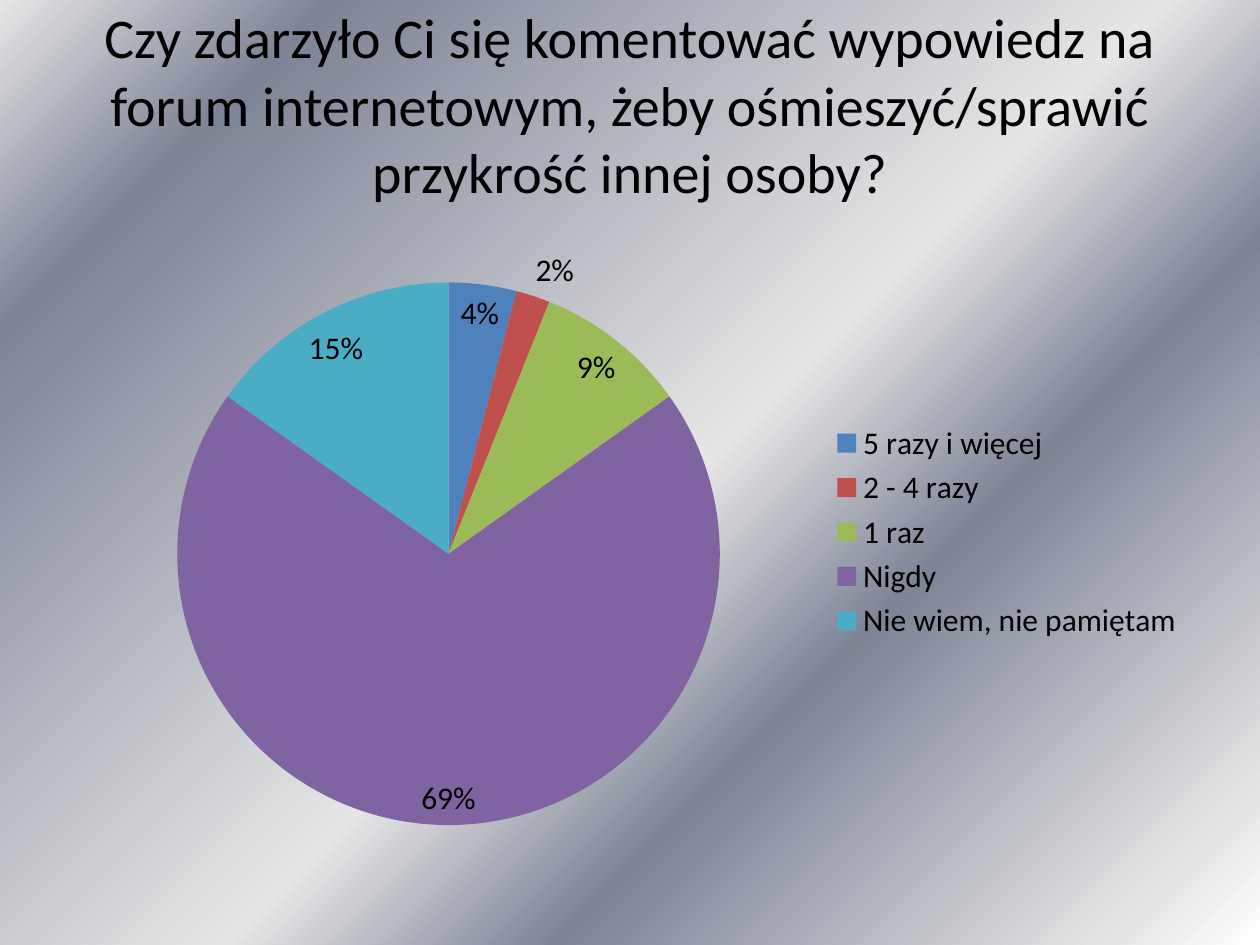
from lxml import etree
from pptx import Presentation, util as u
from pptx.chart.data import CategoryChartData
from pptx.dml.color import RGBColor
from pptx.enum import chart as c, text
from pptx.oxml import parse_xml
from pptx.oxml.ns import nsdecls, qn

WIDTH, HEIGHT = u.Inches(10), u.Inches(7.5)
FONT = "Calibri"
COLOURS = {
    "text": "000000", "white": "FFFFFF", "silver": "E6E6E6", "steel": "7D8496",
    "blue": "4F81BD", "red": "C0504D", "green": "9BBB59",
    "purple": "8064A2", "teal": "4BACC6",
}
BACKGROUND_STOPS = [(0, "white"), (7, "silver"), (32, "steel"),
                    (47, "silver"), (85, "steel"), (100, "silver")]
QUESTION = ("Czy zdarzyło Ci się komentować wypowiedz na forum internetowym, "
            "żeby ośmieszyć/sprawić przykrość innej osoby?")
ANSWERS = [
    ("5 razy i więcej", 0.04, "blue"),
    ("2 - 4 razy", 0.02, "red"),
    ("1 raz", 0.09, "green"),
    ("Nigdy", 0.69, "purple"),
    ("Nie wiem, nie pamiętam", 0.15, "teal"),
]


def colour(name):
    return RGBColor.from_string(COLOURS[name])


def box(left, top, width, height):
    """Turn shares of the slide's size into lengths."""
    return (int(left * WIDTH), int(top * HEIGHT),
            int(width * WIDTH), int(height * HEIGHT))


def format_font(font, size):
    font.name = FONT
    font.size = u.Pt(size)
    font.color.rgb = colour("text")


def paint_background(slide, stops, angle):
    """Fill with a gradient; the angle runs clockwise, in degrees."""
    fill = slide.background.fill
    fill.gradient()
    gradient = slide.background._cSld.find(".//" + qn("a:gradFill"))
    stop_list = gradient.find(qn("a:gsLst"))
    for stop in list(stop_list):
        stop_list.remove(stop)
    for percent, name in stops:
        stop_list.append(parse_xml(
            f'<a:gs {nsdecls("a")} pos="{percent * 1000}">'
            f'<a:srgbClr val="{COLOURS[name]}"/></a:gs>'))
    gradient.find(qn("a:lin")).set("ang", str(angle * 60000))


def add_title(slide, place, words):
    frame = slide.shapes.add_textbox(*place).text_frame
    frame.word_wrap = True
    frame.auto_size = text.MSO_AUTO_SIZE.NONE
    frame.vertical_anchor = text.MSO_ANCHOR.MIDDLE
    frame.margin_bottom = u.Inches(0.58)
    frame.text = words
    paragraph = frame.paragraphs[0]
    paragraph.alignment = text.PP_ALIGN.CENTER
    format_font(paragraph.runs[0].font, 32)


def set_plot_layout(chart, **shares):
    """Fix the plot's inner area as shares of the chart's size."""
    plot_area = chart._chartSpace.find(".//" + qn("c:plotArea"))
    for old in plot_area.findall(qn("c:layout")):
        plot_area.remove(old)
    layout = etree.Element(qn("c:layout"))
    manual = etree.SubElement(layout, qn("c:manualLayout"))
    settings = {"layoutTarget": "inner", "xMode": "edge", "yMode": "edge", **shares}
    for tag, value in settings.items():
        etree.SubElement(manual, qn(f"c:{tag}")).set("val", str(value))
    plot_area.insert(0, layout)


def add_pie(slide, place, answers):
    data = CategoryChartData(number_format="0%")
    data.categories = [label for label, _, _ in answers]
    data.add_series("Series 1", [value for _, value, _ in answers])
    chart = slide.shapes.add_chart(c.XL_CHART_TYPE.PIE, *place, data).chart
    chart.has_title = False
    format_font(chart.font, 18)
    chart.has_legend = True
    chart.legend.position = c.XL_LEGEND_POSITION.RIGHT
    chart.legend.include_in_layout = False

    plot = chart.plots[0]
    plot.vary_by_categories = True
    for index, (_, _, name) in enumerate(answers):
        fill = plot.series[0].points[index].format.fill
        fill.solid()
        fill.fore_color.rgb = colour(name)
    labels = plot.series[0].data_labels
    labels.show_value = True
    labels.number_format = "0%"
    labels.number_format_is_linked = False
    labels.position = c.XL_LABEL_POSITION.BEST_FIT
    format_font(labels.font, 18)
    set_plot_layout(chart, x=0.1, y=0.1, w=0.48, h=0.87)


def main():
    presentation = Presentation()
    presentation.slide_width, presentation.slide_height = WIDTH, HEIGHT
    slide = presentation.slides.add_slide(presentation.slide_layouts[6])
    paint_background(slide, BACKGROUND_STOPS, 225)
    add_title(slide, box(0.05, 0.06, 0.9, 0.17), QUESTION)
    add_pie(slide, box(0.05, 0.233, 0.9, 0.66), ANSWERS)
    presentation.save("out.pptx")


if __name__ == "__main__":
    main()
